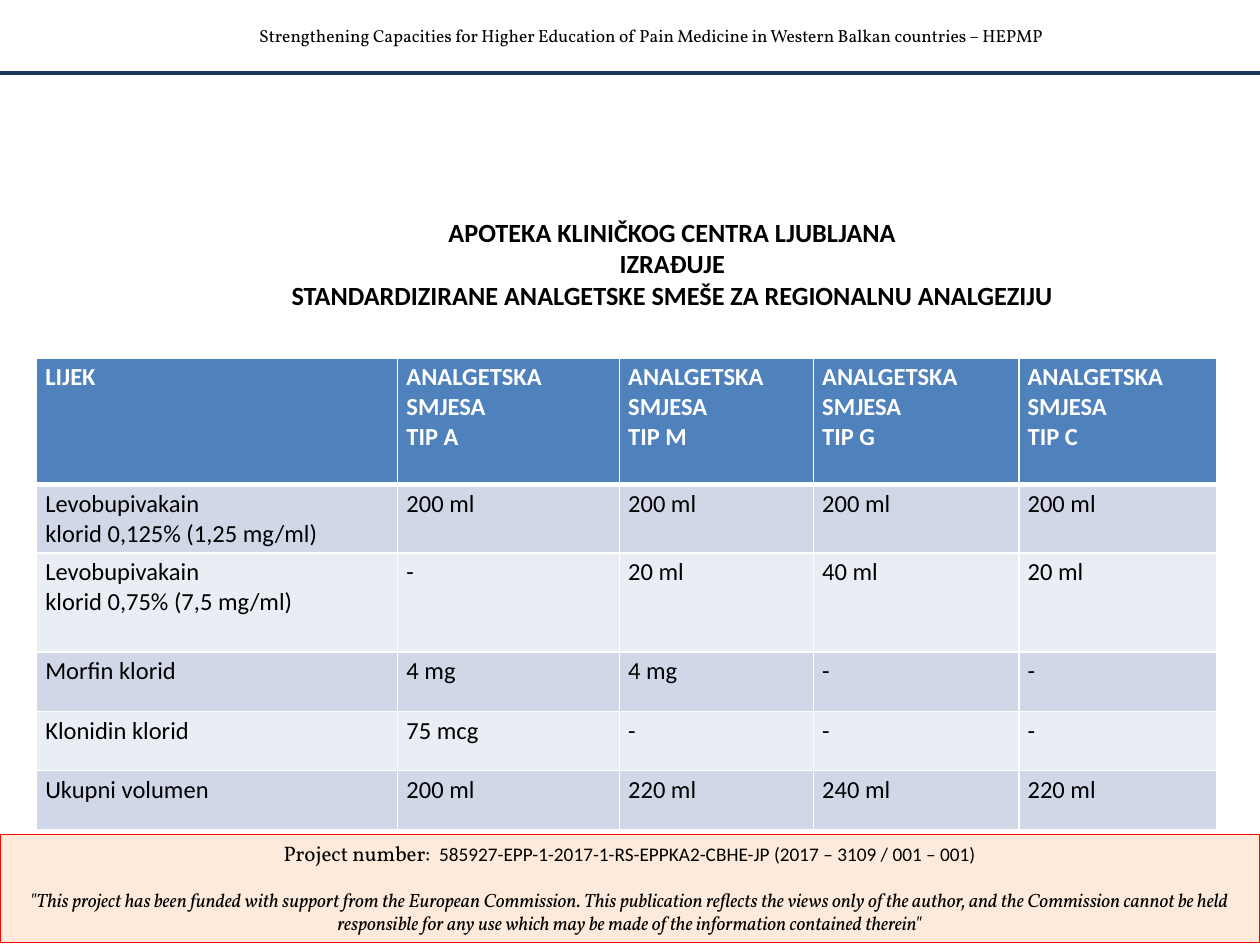
from lxml.etree import SubElement
from pptx import Presentation
from pptx.dml.color import RGBColor
from pptx.enum.shapes import MSO_CONNECTOR, MSO_SHAPE
from pptx.enum.text import MSO_ANCHOR, PP_ALIGN
from pptx.oxml.ns import qn
from pptx.util import Pt

COLORS = {
    "text": "000000", "white": "FFFFFF", "rule": "17375E",
    "footer": "FDEADA", "footer_line": "FF0000",
    "header": "4F81BD", "odd": "D0D8E8", "even": "E9EDF4",
}


def add_run(p, text, color="text", **fmt):
    r = p.add_run()
    r.text = text
    r.font.color.rgb = RGBColor.from_string(COLORS[color])
    for key, value in fmt.items():
        setattr(r.font, key, value)


def add_border(cell, side, width):
    ln = SubElement(cell._tc.get_or_add_tcPr(), qn(f"a:{side}"), w=str(Pt(width)))
    fill = SubElement(ln, qn("a:solidFill"))
    SubElement(fill, qn("a:srgbClr"), val=COLORS["white"])


prs = Presentation()
prs.slide_width, prs.slide_height = Pt(720), Pt(540)
s = prs.slides.add_slide(prs.slide_layouts[6])

sp = s.shapes.add_shape(MSO_SHAPE.RECTANGLE, Pt(0), Pt(476.8), Pt(720), Pt(61.9))
sp.shadow.inherit = False
sp.fill.solid()
sp.fill.fore_color.rgb = RGBColor.from_string(COLORS["footer"])
sp.line.color.rgb = RGBColor.from_string(COLORS["footer_line"])
sp.line.width = Pt(0.75)
tf = sp.text_frame
tf.word_wrap = True
tf.vertical_anchor = MSO_ANCHOR.TOP
p = tf.paragraphs[0]
p.alignment = PP_ALIGN.CENTER
add_run(p, "Project number:  ", name="Vollkorn", size=Pt(12))
add_run(p, "585927-EPP-1-2017-1-RS-EPPKA2-CBHE-JP (2017 – 3109 / 001 – 001)", name="Calibri", size=Pt(11))
p = tf.add_paragraph()
p.alignment = PP_ALIGN.CENTER
p.space_before = Pt(13)
add_run(
    p,
    '"This project has been funded with support from the European Commission. '
    "This publication reflects the views only of the author, and the Commission cannot be held "
    'responsible for any use which may be made of the information contained therein"',
    name="Vollkorn", size=Pt(11), italic=True,
)

rule = s.shapes.add_connector(MSO_CONNECTOR.STRAIGHT, Pt(0), Pt(41.8), Pt(720), Pt(41.8))
rule.line.color.rgb = RGBColor.from_string(COLORS["rule"])
rule.line.width = Pt(2)
SubElement(rule._element.spPr, qn("a:effectLst"))

texts = [
    ((131.8, 10.8, 480.2, 19.4), MSO_ANCHOR.TOP,
     "Strengthening Capacities for Higher Education of Pain Medicine in Western Balkan countries – HEPMP",
     {"name": "Vollkorn", "size": Pt(10)}),
    ((88.6, 112.3, 591.1, 76.3), MSO_ANCHOR.MIDDLE,
     "APOTEKA KLINIČKOG CENTRA LJUBLJANA\vIZRAĐUJE\v"
     "STANDARDIZIRANE ANALGETSKE SMEŠE ZA REGIONALNU ANALGEZIJU",
     {"name": "Calibri", "size": Pt(15), "bold": True}),
]
for box, anchor, text, fmt in texts:
    tf = s.shapes.add_textbox(*map(Pt, box)).text_frame
    tf.word_wrap = True
    tf.vertical_anchor = anchor
    p = tf.paragraphs[0]
    p.alignment = PP_ALIGN.CENTER
    for i, line in enumerate(text.split("\v")):
        if i:
            p.add_line_break()
        add_run(p, line, **fmt)

rows = [
    ["LIJEK"] + [f"ANALGETSKA SMJESA\nTIP {kind}" for kind in "AMGC"],
    ["Levobupivakain\nklorid 0,125% (1,25 mg/ml)"] + ["200 ml"] * 4,
    ["Levobupivakain\nklorid 0,75% (7,5 mg/ml)", "-", "20 ml", "40 ml", "20 ml"],
    ["Morfin klorid", "4 mg", "4 mg", "-", "-"],
    ["Klonidin klorid", "75 mcg", "-", "-", "-"],
    ["Ukupni volumen", "200 ml", "220 ml", "240 ml", "220 ml"],
]
widths = [206.4, 126.7, 110.9, 117.4, 113]
heights = [72.4, 39.2, 56.6, 33.8, 33.8, 33.8]
table = s.shapes.add_table(
    len(rows), len(widths), Pt(20.9), Pt(204.5), Pt(sum(widths)), Pt(sum(heights))
).table
for column, width in zip(table.columns, widths):
    column.width = Pt(width)
for i, (row, height) in enumerate(zip(rows, heights)):
    table.rows[i].height = Pt(height)
    fill = "header" if i == 0 else "odd" if i % 2 else "even"
    for j, text in enumerate(row):
        cell = table.cell(i, j)
        cell.margin_left = cell.margin_right = Pt(5)
        cell.margin_top = cell.margin_bottom = Pt(2.6)
        edges = {"lnL": 1, "lnR": 1, "lnT": 3 if i == 1 else 1, "lnB": 3 if i == 0 else 1}
        for side, width in edges.items():
            add_border(cell, side, width)
        cell.fill.solid()
        cell.fill.fore_color.rgb = RGBColor.from_string(COLORS[fill])
        tf = cell.text_frame
        for k, line in enumerate(text.split("\n")):
            p = tf.add_paragraph() if k else tf.paragraphs[0]
            add_run(p, line, "text" if i else "white", name="Calibri", size=Pt(14), bold=i == 0)

prs.save("out.pptx")
